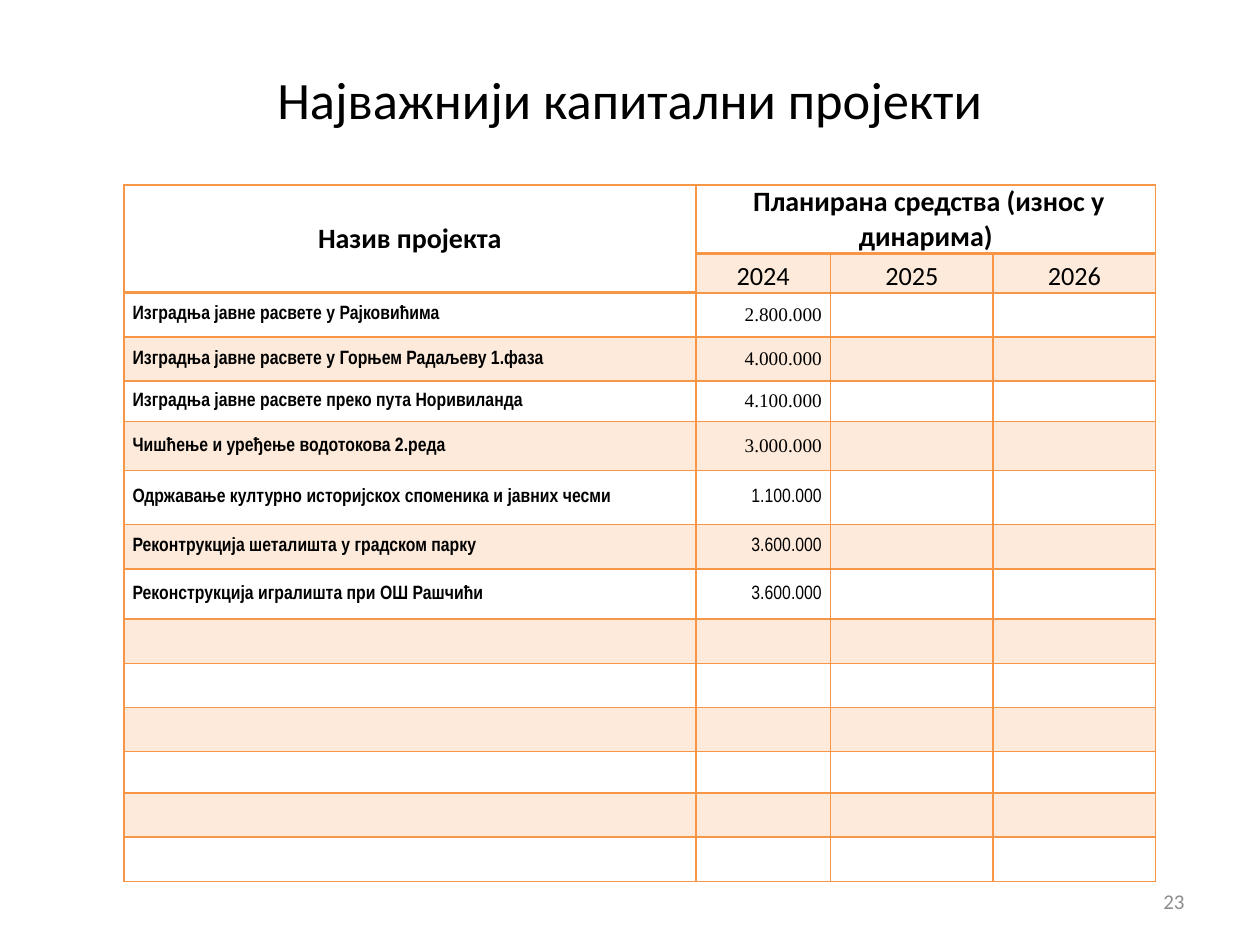
from lxml import etree
from pptx import Presentation
from pptx.dml.color import RGBColor
from pptx.enum.text import MSO_ANCHOR, PP_ALIGN
from pptx.oxml.ns import qn
from pptx.util import Inches, Pt

LEFT, CENTER, RIGHT = PP_ALIGN.LEFT, PP_ALIGN.CENTER, PP_ALIGN.RIGHT
MIDDLE, BOTTOM = MSO_ANCHOR.MIDDLE, MSO_ANCHOR.BOTTOM
COLORS = {"ink": "000000", "accent": "F79646", "page": "8C8C8C"}
BAND_OPACITY = 20
WIDTH, HEIGHT = 10, 7.5
COLUMN_SHARES = [4.54, 1.07, 1.29, 1.29]
ROW_SHARES = [0.52, 0.31, 0.35, 0.35, 0.32, 0.39, 0.43, 0.35, 0.4,
              0.35, 0.35, 0.35, 0.33, 0.35, 0.35]
YEARS = ["2024", "2025", "2026"]
SERIF, NARROW = "Times New Roman", "Arial Narrow"
PROJECTS = [
    ("Изградња јавне расвете у Рајковићима", "2.800.000", SERIF),
    ("Изградња јавне расвете у Горњем Радаљеву 1.фаза", "4.000.000", SERIF),
    ("Изградња јавне расвете преко пута Норивиланда", "4.100.000", SERIF),
    ("Чишћење и уређење водотокова 2.реда", "3.000.000", SERIF),
    ("Одржавање културно историјскох споменика и јавних чесми", "1.100.000", NARROW),
    ("Реконтрукција шеталишта у градском парку", "3.600.000", NARROW),
    ("Реконструкција игралишта при ОШ Рашчићи", "3.600.000", NARROW),
]


def write(frame, text, size=11, font="Calibri", color="ink", bold=False, align=LEFT):
    """Put one formatted paragraph into a text frame."""
    paragraph = frame.paragraphs[0]
    paragraph.alignment = align
    run = paragraph.add_run()
    run.text = text
    run.font.size, run.font.name, run.font.bold = Pt(size), font, bold
    run.font.color.rgb = RGBColor.from_string(COLORS[color])


def slide_box(left, top, width, height):
    """Turn percentages of the slide into a box of lengths."""
    return (Inches(left * WIDTH / 100), Inches(top * HEIGHT / 100),
            Inches(width * WIDTH / 100), Inches(height * HEIGHT / 100))


def style_cell(cell, banded, bottom_width):
    """Give a cell its margins, borders and band fill."""
    cell.margin_left = cell.margin_right = Inches(0.07)
    cell.margin_top = cell.margin_bottom = 0
    cell.vertical_anchor = MIDDLE
    properties = cell._tc.get_or_add_tcPr()
    for side in "LRTB":
        width = bottom_width if side == "B" else 1
        line = etree.SubElement(properties, qn(f"a:ln{side}"), w=str(Pt(width)))
        solid = etree.SubElement(line, qn("a:solidFill"))
        etree.SubElement(solid, qn("a:srgbClr"), val=COLORS["accent"])
    if not banded:
        cell.fill.background()
        return
    cell.fill.solid()
    cell.fill.fore_color.rgb = RGBColor.from_string(COLORS["accent"])
    tint = properties.find(qn("a:solidFill")).find(qn("a:srgbClr"))
    etree.SubElement(tint, qn("a:alpha"), val=str(BAND_OPACITY * 1000))


def add_title(slide, box):
    """Place the slide title in its placeholder."""
    title = slide.shapes.title
    title.left, title.top, title.width, title.height = box
    title.text_frame.vertical_anchor = MIDDLE
    write(title.text_frame, "Најважнији капитални пројекти", size=30, align=CENTER)


def add_project_table(slide, box):
    """Place the table of projects and planned funds."""
    table = slide.shapes.add_table(len(ROW_SHARES), len(COLUMN_SHARES), *box).table
    table.first_row = table.horz_banding = False
    for column, share in zip(table.columns, COLUMN_SHARES):
        column.width = int(box[2] * share / sum(COLUMN_SHARES))
    for row, share in zip(table.rows, ROW_SHARES):
        row.height = int(box[3] * share / sum(ROW_SHARES))
    for row_index, row in enumerate(table.rows):
        for column_index, cell in enumerate(row.cells):
            under_name = row_index == 1 and column_index == 0
            banded = row_index % 2 == 1 and not under_name
            style_cell(cell, banded, 2 if row_index == 0 or under_name else 1)

    name_header, funds_header = table.cell(0, 0), table.cell(0, 1)
    name_header.merge(table.cell(1, 0))
    funds_header.merge(table.cell(0, len(YEARS)))
    funds_header.vertical_anchor = BOTTOM
    write(name_header.text_frame, "Назив пројекта", size=16, bold=True, align=CENTER)
    write(funds_header.text_frame, " Планирана средства (износ у динарима)",
          size=16, bold=True, align=CENTER)
    for column_index, year in enumerate(YEARS, 1):
        year_cell = table.cell(1, column_index)
        year_cell.vertical_anchor = BOTTOM
        write(year_cell.text_frame, year, size=15, align=CENTER)
    for row_index, (project, amount, amount_font) in enumerate(PROJECTS, 2):
        write(table.cell(row_index, 0).text_frame, project, font=NARROW, bold=True)
        write(table.cell(row_index, 1).text_frame, amount, font=amount_font, align=RIGHT)


def add_page_number(slide, box):
    """Place the page number at the lower right."""
    frame = slide.shapes.add_textbox(*box).text_frame
    frame.word_wrap = True
    frame.vertical_anchor = MIDDLE
    write(frame, "23", size=12, color="page", align=RIGHT)


def main():
    """Build and save the slide."""
    deck = Presentation()
    deck.slide_width, deck.slide_height = Inches(WIDTH), Inches(HEIGHT)
    slide = deck.slides.add_slide(deck.slide_layouts[5])
    add_title(slide, slide_box(5, 4, 90, 12.8))
    add_project_table(slide, slide_box(9.83, 19.6, 81.9, 73.4))
    add_page_number(slide, slide_box(71.7, 92.7, 23.3, 5.3))
    deck.save("out.pptx")


if __name__ == "__main__":
    main()
